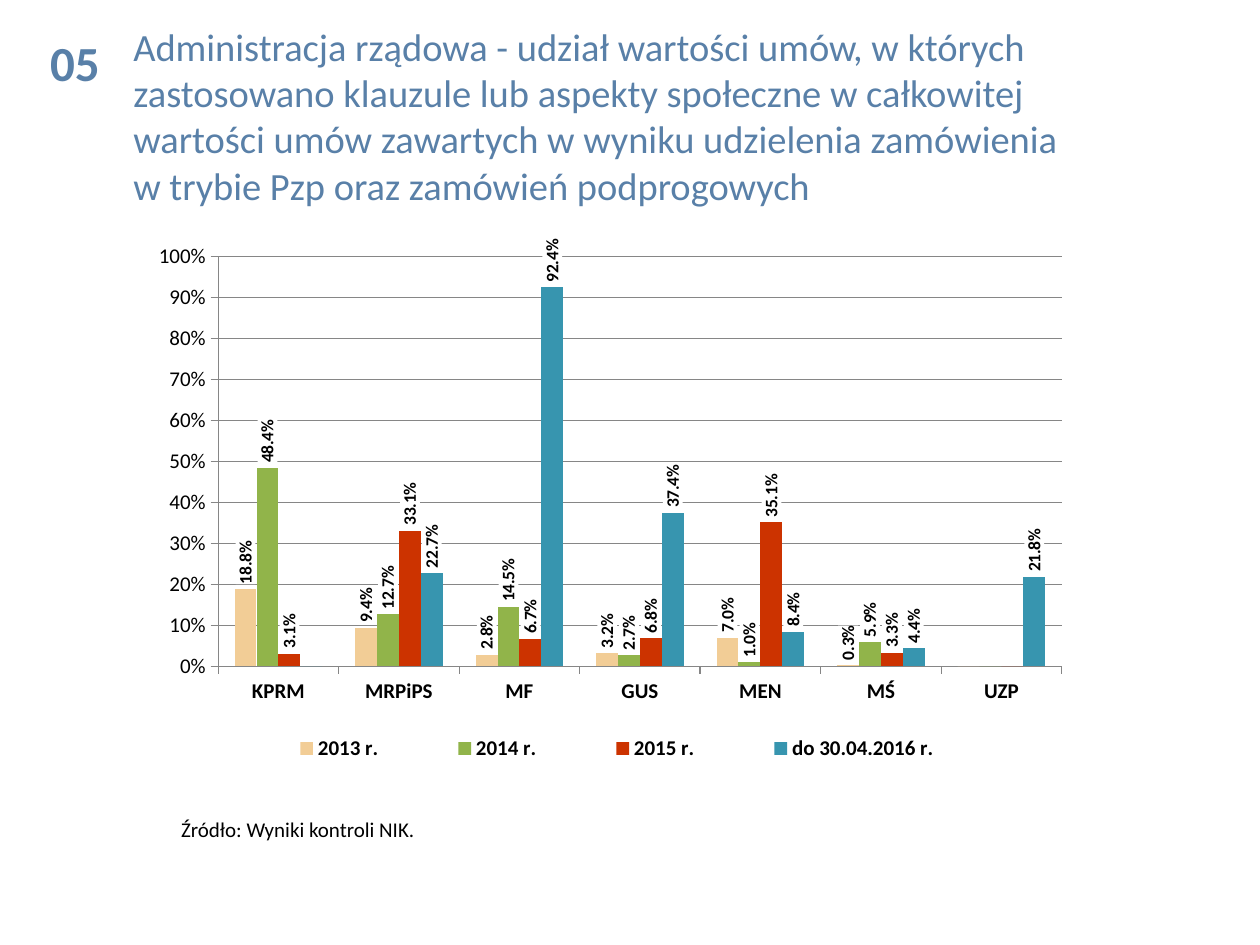
from lxml.etree import SubElement
from pptx import Presentation
from pptx.chart.data import CategoryChartData
from pptx.dml.color import RGBColor
from pptx.enum.chart import XL_CHART_TYPE, XL_LABEL_POSITION, XL_LEGEND_POSITION, XL_TICK_MARK
from pptx.enum.text import MSO_ANCHOR, MSO_AUTO_SIZE, PP_ALIGN
from pptx.oxml import parse_xml
from pptx.oxml.ns import nsdecls, qn
from pptx.util import Pt

BLUE = RGBColor(0x59, 0x80, 0xA8)
BLACK = RGBColor(0, 0, 0)
GREY = RGBColor(0x86, 0x86, 0x86)
FONT = "Calibri"

TITLE = (
    "Administracja rządowa - udział wartości umów, w których zastosowano klauzule "
    "lub aspekty społeczne w całkowitej wartości umów zawartych w wyniku udzielenia "
    "zamówienia \vw trybie Pzp oraz zamówień podprogowych"
)
OFFICES = ["KPRM", "MRPiPS", "MF", "GUS", "MEN", "MŚ", "UZP"]
SHARES = [
    ("2013 r.", RGBColor(0xF2, 0xCD, 0x96), [0.188, 0.094, 0.028, 0.032, 0.07, 0.003, 0]),
    ("2014 r.", RGBColor(0x91, 0xB4, 0x4A), [0.484, 0.127, 0.145, 0.027, 0.01, 0.059, 0]),
    ("2015 r.", RGBColor(0xCC, 0x33, 0x00), [0.031, 0.331, 0.067, 0.068, 0.351, 0.033, 0]),
    ("do 30.04.2016 r.", RGBColor(0x37, 0x95, 0xAF),
     [0, 0.227, 0.924, 0.374, 0.084, 0.044, 0.218]),
]


def format_font(font, color=BLACK, **values):
    for name, value in {"name": FONT, **values}.items():
        setattr(font, name, value)
    font.color.rgb = color


def write_text(shape, text, color, alignment=PP_ALIGN.LEFT, **font_values):
    frame = shape.text_frame
    frame.word_wrap = True
    paragraph = frame.paragraphs[0]
    paragraph.text = text
    paragraph.alignment = alignment
    for run in paragraph.runs:
        format_font(run.font, color, **font_values)
    return frame


def add_title(slide):
    title = slide.shapes.title
    box = {"left": Pt(69), "top": Pt(15), "width": Pt(603), "height": Pt(102)}
    for name, value in box.items():
        setattr(title, name, value)
    frame = write_text(title, TITLE, BLUE, size=Pt(22))
    frame.vertical_anchor = MSO_ANCHOR.MIDDLE
    frame.auto_size = MSO_AUTO_SIZE.NONE


def add_text(slide, box, text, color, **values):
    shape = slide.shapes.add_textbox(*(Pt(length) for length in box))
    frame = write_text(shape, text, color, **values)
    frame.auto_size = MSO_AUTO_SIZE.SHAPE_TO_FIT_TEXT
    return frame


def set_layout(element, x, y, width, height, inner=False):
    """Place the plot area or the legend by fractions of the chart."""
    for old in element.findall(qn("c:layout")):
        element.remove(old)
    target = '<c:layoutTarget val="inner"/>' if inner else ""
    layout = parse_xml(
        f'<c:layout {nsdecls("c")}><c:manualLayout>{target}'
        '<c:xMode val="edge"/><c:yMode val="edge"/>'
        f'<c:x val="{x}"/><c:y val="{y}"/><c:w val="{width}"/><c:h val="{height}"/>'
        "</c:manualLayout></c:layout>"
    )
    if inner:
        element.insert(0, layout)
    else:
        element.find(qn("c:legendPos")).addnext(layout)


def add_labels(series, values):
    """Upright labels on white, none where the share is zero."""
    labels = series.data_labels
    settings = {"show_value": True, "number_format": "0.0%",
                "number_format_is_linked": False,
                "position": XL_LABEL_POSITION.OUTSIDE_END}
    for name, value in settings.items():
        setattr(labels, name, value)
    format_font(labels.font, size=Pt(10), bold=True)

    element = series._element.find(qn("c:dLbls"))
    text_properties = element.find(qn("c:txPr"))
    body = text_properties.find(qn("a:bodyPr"))
    body.set("rot", "-5400000")
    body.set("vert", "horz")
    text_properties.addprevious(parse_xml(
        f'<c:spPr {nsdecls("c", "a")}><a:solidFill><a:srgbClr val="FFFFFF"/>'
        "</a:solidFill></c:spPr>"
    ))
    zeros = [index for index, value in enumerate(values) if value == 0]
    for position, index in enumerate(zeros):
        label = SubElement(element, qn("c:dLbl"))
        SubElement(label, qn("c:idx")).set("val", str(index))
        SubElement(label, qn("c:delete")).set("val", "1")
        element.insert(position, label)


def format_axes(chart):
    for axis, bold in ((chart.category_axis, True), (chart.value_axis, False)):
        axis.major_tick_mark = XL_TICK_MARK.OUTSIDE
        axis.format.line.color.rgb = GREY
        axis.format.line.width = Pt(0.75)
        format_font(axis.tick_labels.font, size=Pt(12), bold=bold)
    value_axis = chart.value_axis
    settings = {"minimum_scale": 0, "maximum_scale": 1, "major_unit": 0.1,
                "has_major_gridlines": True}
    for name, value in settings.items():
        setattr(value_axis, name, value)
    value_axis.tick_labels.number_format = "0%"
    value_axis.tick_labels.number_format_is_linked = False
    gridline = value_axis.major_gridlines.format.line
    gridline.color.rgb = GREY
    gridline.width = Pt(0.75)


def add_share_chart(slide):
    data = CategoryChartData(number_format="0.0%")
    data.categories = OFFICES
    for name, _, values in SHARES:
        data.add_series(name, values)
    chart = slide.shapes.add_chart(
        XL_CHART_TYPE.COLUMN_CLUSTERED, Pt(88), Pt(134), Pt(524), Pt(312.5), data
    ).chart
    chart.has_title = False
    format_font(chart.font, size=Pt(10))

    # Columns
    plot = chart.plots[0]
    plot.gap_width = 150
    plot.overlap = 0
    plot.vary_by_categories = False
    for series, (_, color, values) in zip(plot.series, SHARES):
        series.format.fill.solid()
        series.format.fill.fore_color.rgb = color
        series.invert_if_negative = False
        add_labels(series, values)
    format_axes(chart)

    # Legend and plot placement
    chart.has_legend = True
    legend = chart.legend
    legend.position = XL_LEGEND_POSITION.BOTTOM
    legend.include_in_layout = False
    format_font(legend.font, size=Pt(12), bold=True)
    set_layout(legend._element, 0.08, 0.9, 0.85, 0.08)
    plot_area = chart._chartSpace.find(f".//{qn('c:plotArea')}")
    set_layout(plot_area, 0.07, 0.04, 0.92, 0.75, inner=True)


def main():
    presentation = Presentation()
    presentation.slide_width, presentation.slide_height = Pt(720), Pt(540)
    slide = presentation.slides.add_slide(presentation.slide_layouts[5])

    # Heading with section number
    add_title(slide)
    add_text(slide, (20, 15, 45.5, 41), "05", BLUE,
             alignment=PP_ALIGN.CENTER, size=Pt(28), bold=True)

    # Chart and its source
    add_share_chart(slide)
    source = add_text(slide, (93.5, 463, 289.5, 22), "Źródło: Wyniki kontroli NIK.",
                      BLACK, size=Pt(12))
    source.margin_left = Pt(10)

    presentation.save("out.pptx")


if __name__ == "__main__":
    main()
